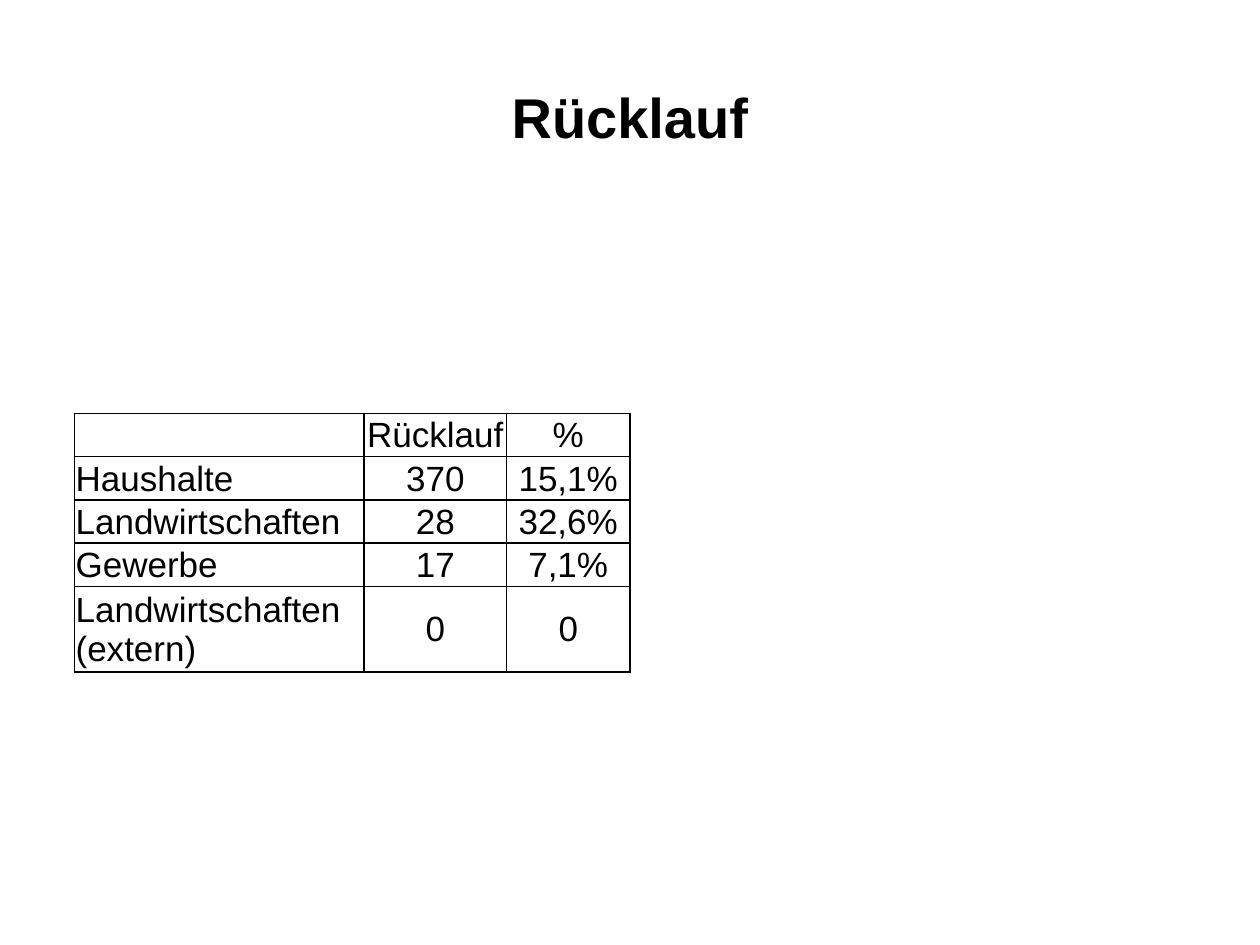
from lxml.etree import SubElement
from pptx import Presentation
from pptx.dml.color import RGBColor
from pptx.enum.text import MSO_ANCHOR, PP_ALIGN
from pptx.oxml.ns import qn
from pptx.util import Inches, Pt

BLACK = RGBColor(0x00, 0x00, 0x00)
COLUMN_WIDTHS = [2.3, 1.13, 0.98]
ROW_HEIGHTS = [0.32, 0.32, 0.32, 0.32, 0.64]
RETURNS = [
    ["", "Rücklauf", "%"],
    ["Haushalte", "370", "15,1%"],
    ["Landwirtschaften", "28", "32,6%"],
    ["Gewerbe", "17", "7,1%"],
    ["Landwirtschaften (extern)", "0", "0"],
]


class SlideBuilder:
    font_name = "Arial"
    title_size = Pt(32)
    table_size = Pt(20)
    border_width = Pt(1)

    def __init__(self, slide):
        self.slide = slide

    def format_text(self, text_frame, size, alignment, bold=False):
        for paragraph in text_frame.paragraphs:
            paragraph.alignment = alignment
            for run in paragraph.runs:
                run.font.name = self.font_name
                run.font.size = size
                run.font.bold = bold
                run.font.color.rgb = BLACK

    def add_title(self, text, left, top, width, height):
        box = self.slide.shapes.add_textbox(
            Inches(left), Inches(top), Inches(width), Inches(height))
        text_frame = box.text_frame
        text_frame.word_wrap = True
        text_frame.vertical_anchor = MSO_ANCHOR.MIDDLE
        text_frame.text = text
        self.format_text(text_frame, self.title_size, PP_ALIGN.CENTER, bold=True)

    def add_borders(self, cell):
        properties = cell._tc.get_or_add_tcPr()
        for side in ("lnL", "lnR", "lnT", "lnB"):
            line = SubElement(properties, qn(f"a:{side}"), w=str(self.border_width))
            fill = SubElement(line, qn("a:solidFill"))
            SubElement(fill, qn("a:srgbClr"), val=str(BLACK))

    def format_cell(self, cell, text, alignment):
        cell.margin_left = cell.margin_right = cell.margin_top = Inches(0.01)
        cell.margin_bottom = 0
        cell.vertical_anchor = MSO_ANCHOR.MIDDLE
        self.add_borders(cell)
        cell.fill.background()
        cell.text_frame.text = text
        self.format_text(cell.text_frame, self.table_size, alignment)

    def add_table(self, rows, left, top, column_widths, row_heights):
        table = self.slide.shapes.add_table(
            len(rows), len(column_widths), Inches(left), Inches(top),
            Inches(sum(column_widths)), Inches(sum(row_heights))).table
        table.first_row = table.horz_banding = False
        for column, width in zip(table.columns, column_widths):
            column.width = Inches(width)
        for row, height, texts in zip(table.rows, row_heights, rows):
            row.height = Inches(height)
            for index, (cell, text) in enumerate(zip(row.cells, texts)):
                alignment = PP_ALIGN.CENTER if index else PP_ALIGN.LEFT
                self.format_cell(cell, text, alignment)


def main():
    presentation = Presentation()
    presentation.slide_width = Inches(10)
    presentation.slide_height = Inches(7.5)
    slide = presentation.slides.add_slide(presentation.slide_layouts[6])
    builder = SlideBuilder(slide)
    builder.add_title("Rücklauf", 0.5, 0.3, 9, 1.25)
    builder.add_table(RETURNS, 0.59, 3.28, COLUMN_WIDTHS, ROW_HEIGHTS)
    presentation.save("out.pptx")


if __name__ == "__main__":
    main()
